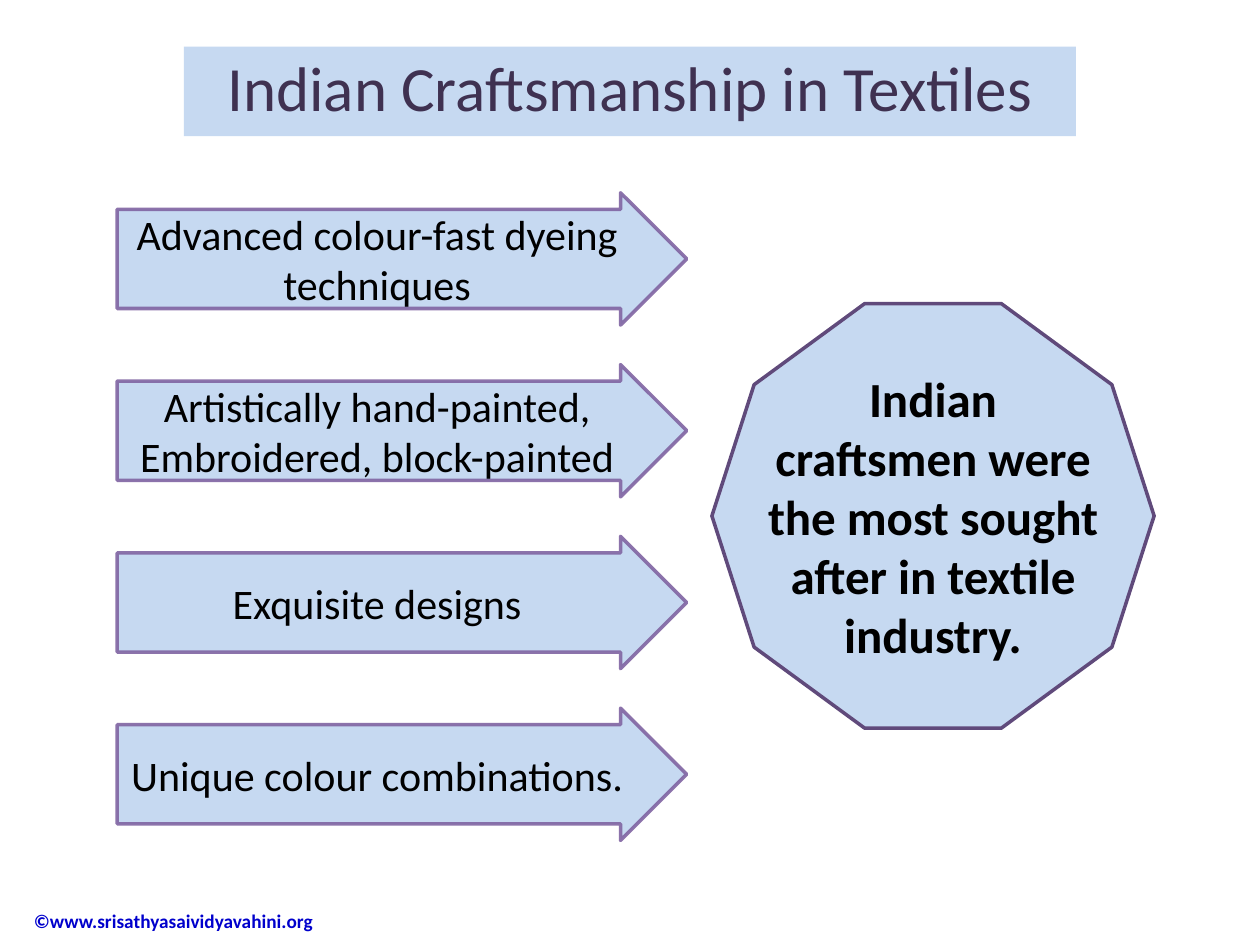
from dataclasses import dataclass
from typing import Optional

from lxml import etree
from pptx import Presentation
from pptx.dml.color import RGBColor
from pptx.enum import shapes, text
from pptx.oxml.ns import qn
from pptx.util import Inches, Pt


@dataclass(frozen=True)
class Theme:
    font: str = "Calibri"
    panel: str = "C6D9F1"
    title: str = "3F3151"
    body: str = "000000"
    footer: str = "0000CC"
    arrow_line: str = "8064A2"
    decagon_line: str = "604A7B"
    title_size: int = 36
    arrow_size: int = 24
    conclusion_size: int = 28
    footer_size: int = 11
    line_width: int = 2


@dataclass(frozen=True)
class Box:
    left: float
    top: float
    width: float
    height: float

    def lengths(self) -> tuple:
        return tuple(Inches(n) for n in (self.left, self.top, self.width, self.height))


@dataclass(frozen=True)
class Panel:
    kind: shapes.MSO_SHAPE
    box: Box
    words: str
    size: int
    color: str = Theme.body
    bold: bool = False
    line: Optional[str] = None
    line_opacity: int = 100
    inset: float = 0.1
    adjustments: tuple = ()
    line_spacing: float = 1.0


THEME = Theme()
ARROW_TOP, ARROW_BOTTOM_TOP = 1.53, 5.62
ARROW_TEXTS = (
    "Advanced colour-fast dyeing techniques",
    "Artistically hand-painted, Embroidered, block-painted",
    "Exquisite designs",
    "Unique colour combinations.",
)


def write_text(shape, words: str, size: int, color: str, bold: bool,
               alignment=text.PP_ALIGN.CENTER):
    """Put one styled, vertically centred paragraph in a shape."""
    frame = shape.text_frame
    frame.word_wrap = True
    frame.vertical_anchor = text.MSO_ANCHOR.MIDDLE
    paragraph = frame.paragraphs[0]
    paragraph.text = words
    paragraph.alignment = alignment
    paragraph.font.name = THEME.font
    paragraph.font.size = Pt(size)
    paragraph.font.bold = bold
    paragraph.font.color.rgb = RGBColor.from_string(color)
    return paragraph


def draw_panel(slide, panel: Panel) -> None:
    shape = slide.shapes.add_shape(panel.kind, *panel.box.lengths())
    shape.shadow.inherit = False
    for index, value in enumerate(panel.adjustments):
        shape.adjustments[index] = value
    shape.fill.solid()
    shape.fill.fore_color.rgb = RGBColor.from_string(THEME.panel)

    # Outline, with optional transparency
    if panel.line is None:
        shape.line.fill.background()
    else:
        shape.line.color.rgb = RGBColor.from_string(panel.line)
        shape.line.width = Pt(THEME.line_width)
        if panel.line_opacity < 100:
            color = shape.line._ln.find(".//" + qn("a:srgbClr"))
            etree.SubElement(color, qn("a:alpha"), val=str(panel.line_opacity * 1000))

    frame = shape.text_frame
    frame.margin_top = frame.margin_bottom = Inches(panel.inset)
    paragraph = write_text(shape, panel.words, panel.size, panel.color, panel.bold)
    paragraph.line_spacing = panel.line_spacing


def draw_footer(slide) -> None:
    shape = slide.shapes.add_textbox(*Box(0.17, 7.1, 2.52, 0.41).lengths())
    write_text(shape, "©www.srisathyasaividyavahini.org", THEME.footer_size,
               THEME.footer, True, text.PP_ALIGN.LEFT)


def main() -> None:
    presentation = Presentation()
    presentation.slide_width, presentation.slide_height = Inches(10), Inches(7.5)
    slide = presentation.slides.add_slide(presentation.slide_layouts[6])

    draw_footer(slide)

    # Title band
    draw_panel(slide, Panel(
        shapes.MSO_SHAPE.RECTANGLE, Box(1.46, 0.37, 7.08, 0.71),
        "Indian Craftsmanship in Textiles", THEME.title_size, THEME.title,
        line_spacing=0.9))

    # Evenly spaced arrows
    pitch = (ARROW_BOTTOM_TOP - ARROW_TOP) / (len(ARROW_TEXTS) - 1)
    for row, words in enumerate(ARROW_TEXTS):
        draw_panel(slide, Panel(
            shapes.MSO_SHAPE.RIGHT_ARROW, Box(0.93, ARROW_TOP + row * pitch, 4.52, 1.05),
            words, THEME.arrow_size, line=THEME.arrow_line, line_opacity=90,
            adjustments=(0.75, 0.5)))

    # Conclusion
    draw_panel(slide, Panel(
        shapes.MSO_SHAPE.DECAGON, Box(5.65, 2.41, 3.51, 3.37),
        "Indian craftsmen were the most sought after in textile industry.",
        THEME.conclusion_size, bold=True, line=THEME.decagon_line, inset=0.05))

    presentation.save("out.pptx")


if __name__ == "__main__":
    main()
